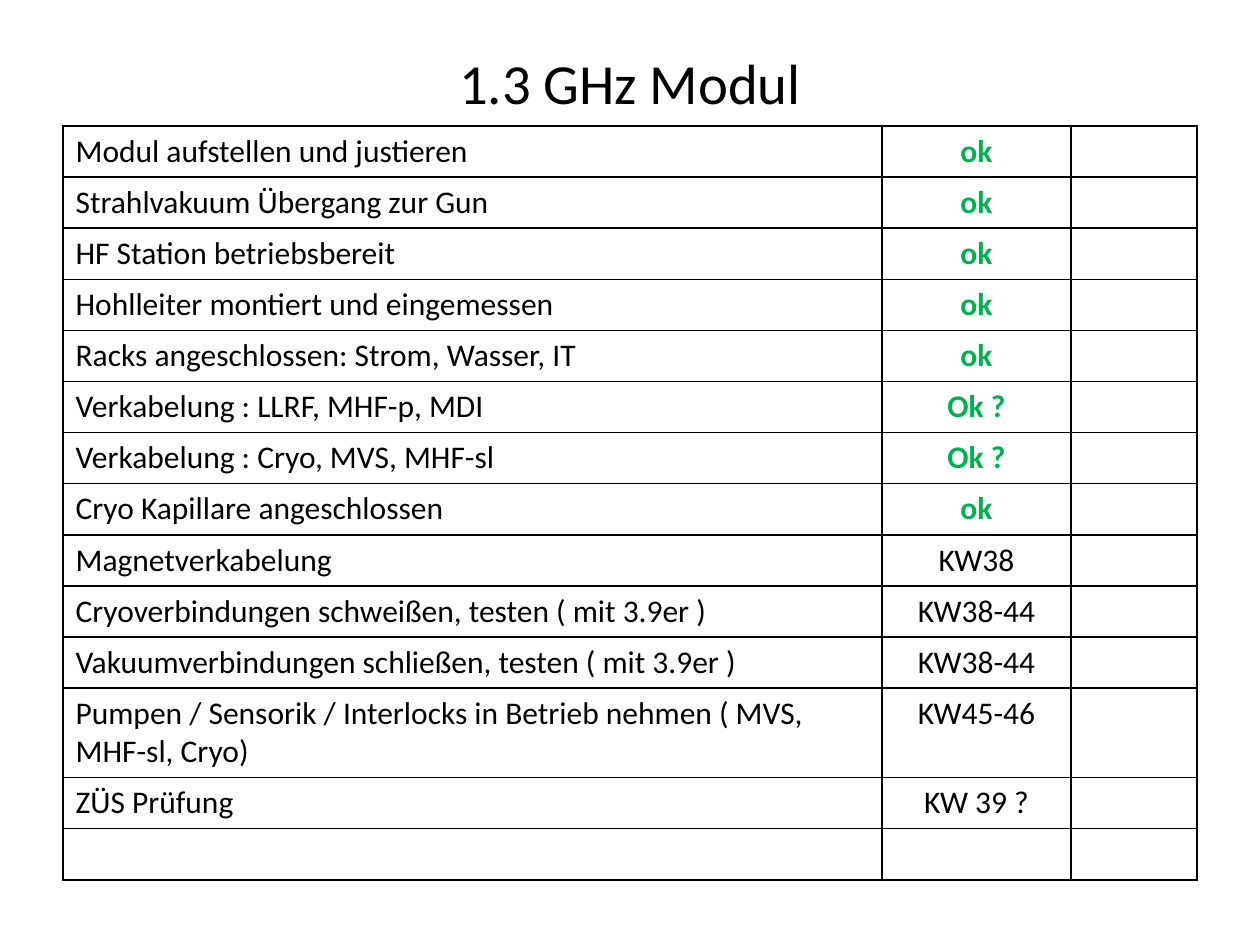
from dataclasses import dataclass

from lxml.etree import SubElement
from pptx import Presentation
from pptx.dml.color import RGBColor
from pptx.enum.text import MSO_ANCHOR, MSO_AUTO_SIZE, PP_ALIGN
from pptx.oxml.ns import qn
from pptx.util import Inches, Pt


@dataclass(frozen=True)
class Theme:
    font: str = "Calibri"
    text: RGBColor = RGBColor(0x00, 0x00, 0x00)
    done: RGBColor = RGBColor(0x00, 0xB0, 0x50)
    border: str = "000000"
    border_width: int = Pt(1)
    title_size: int = Pt(32.4)
    body_size: int = Pt(18)


TASKS = [
    ("Modul aufstellen und justieren", "ok"),
    ("Strahlvakuum Übergang zur Gun", "ok"),
    ("HF Station betriebsbereit", "ok"),
    ("Hohlleiter montiert und eingemessen", "ok"),
    ("Racks angeschlossen: Strom, Wasser, IT", "ok"),
    ("Verkabelung : LLRF, MHF-p, MDI", "Ok ?"),
    ("Verkabelung : Cryo, MVS, MHF-sl", "Ok ?"),
    ("Cryo Kapillare angeschlossen", "ok"),
    ("Magnetverkabelung", "KW38"),
    ("Cryoverbindungen schweißen, testen ( mit 3.9er )", "KW38-44"),
    ("Vakuumverbindungen schließen, testen ( mit 3.9er )", "KW38-44"),
    ("Pumpen / Sensorik / Interlocks in Betrieb nehmen ( MVS, MHF-sl, Cryo)", "KW45-46"),
    ("ZÜS Prüfung", "KW 39 ?"),
    ("", ""),
]
TWO_LINE_ROW = 11
COLUMN_WIDTHS = (6.5, 1.5, 1)


class SlideBuilder:
    def __init__(self, prs, theme):
        self.theme = theme
        self.slide = prs.slides.add_slide(prs.slide_layouts[5])

    def style(self, p, size, color, align, bold=False):
        p.alignment = align
        p.font.name = self.theme.font
        p.font.size = size
        p.font.bold = bold
        p.font.color.rgb = color

    def title(self, text, left, top, width, height):
        sp = self.slide.shapes.title
        sp.left, sp.top = Inches(left), Inches(top)
        sp.width, sp.height = Inches(width), Inches(height)
        tf = sp.text_frame
        tf.text = text
        tf.auto_size = MSO_AUTO_SIZE.NONE
        tf.vertical_anchor = MSO_ANCHOR.MIDDLE
        self.style(tf.paragraphs[0], self.theme.title_size, self.theme.text, PP_ALIGN.CENTER)

    def borders(self, cell):
        """Draw all four cell edges; they must precede the fill in the XML."""
        tc_pr = cell._tc.get_or_add_tcPr()
        for side in ("lnL", "lnR", "lnT", "lnB"):
            ln = SubElement(tc_pr, qn(f"a:{side}"), w=str(self.theme.border_width))
            fill = SubElement(ln, qn("a:solidFill"))
            SubElement(fill, qn("a:srgbClr"), val=self.theme.border)

    def cell(self, cell, text, align, done=False):
        self.borders(cell)
        cell.fill.background()
        cell.text = text
        color = self.theme.done if done else self.theme.text
        self.style(cell.text_frame.paragraphs[0], self.theme.body_size, color, align, done)

    def task_table(self, tasks, left, top, widths, height):
        """Place the checklist in equal rows, with an empty last column."""
        frame = self.slide.shapes.add_table(
            len(tasks), len(widths), Inches(left), Inches(top),
            Inches(sum(widths)), Inches(height))
        table = frame.table
        table.first_row = table.horz_banding = False
        for column, width in zip(table.columns, widths):
            column.width = Inches(width)
        for row, (task, status) in zip(table.rows, tasks):
            task_cell, status_cell, spare_cell = row.cells
            self.cell(task_cell, task, PP_ALIGN.LEFT)
            self.cell(status_cell, status, PP_ALIGN.CENTER, status.lower().startswith("ok"))
            self.cell(spare_cell, "", PP_ALIGN.LEFT)
        return table


def main():
    prs = Presentation()
    prs.slide_width, prs.slide_height = Inches(10), Inches(7.5)
    s = SlideBuilder(prs, Theme())
    s.title("1.3 GHz Modul", 0.5, 0.3, 9, 0.7)
    table = s.task_table(TASKS, 0.5, 1, COLUMN_WIDTHS, 5.68)
    table.rows[TWO_LINE_ROW].height = Inches(0.7)
    prs.save("out.pptx")


if __name__ == "__main__":
    main()
